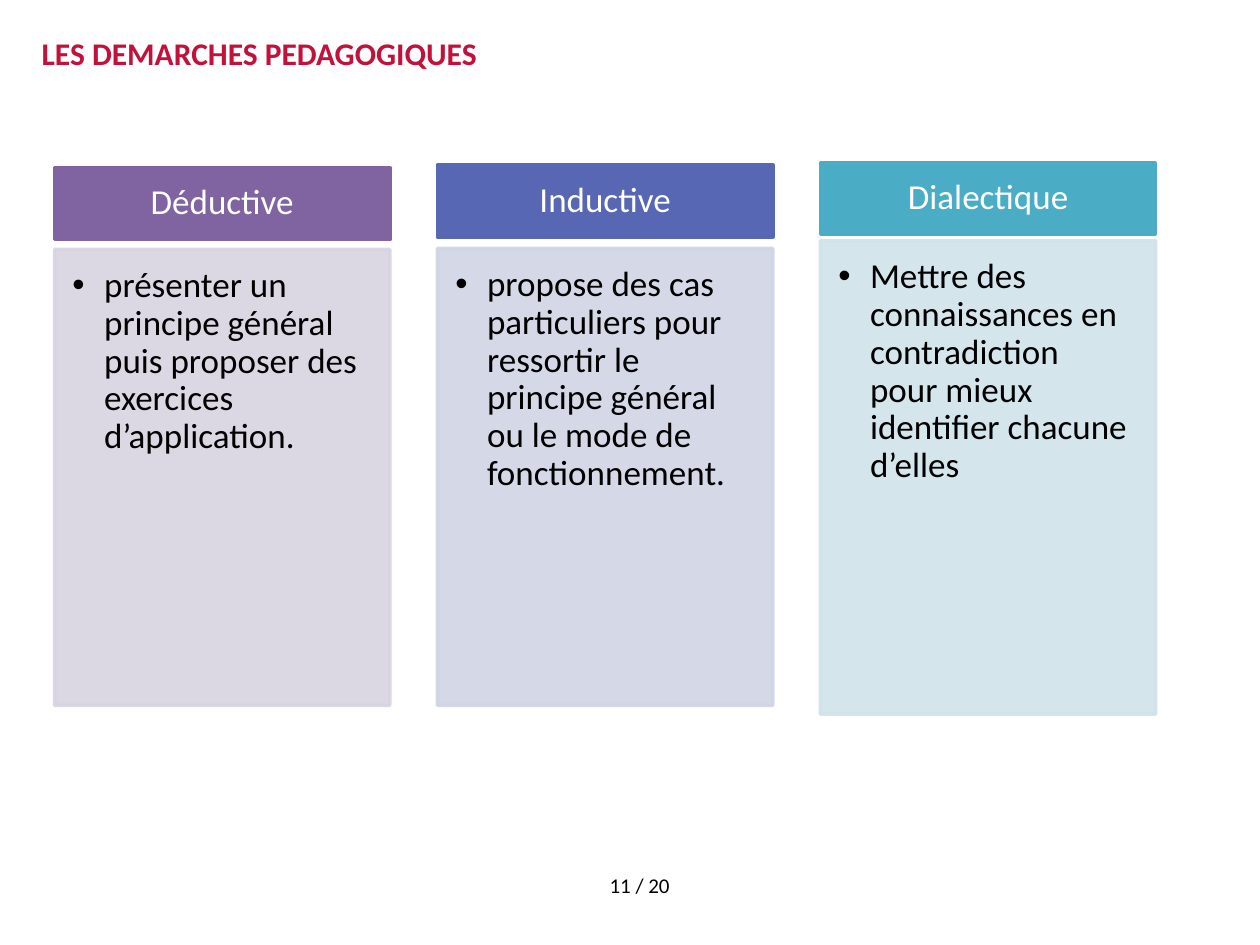
"""Build the slide on the three teaching approaches."""
from lxml import etree
from pptx import Presentation
from pptx.dml.color import RGBColor
from pptx.enum.shapes import MSO_SHAPE
from pptx.enum.text import MSO_ANCHOR, PP_ALIGN
from pptx.oxml.ns import qn
from pptx.util import Cm, Pt

RECT = MSO_SHAPE.RECTANGLE
TOP, MIDDLE = MSO_ANCHOR.TOP, MSO_ANCHOR.MIDDLE
LEFT, CENTER, JUSTIFY = PP_ALIGN.LEFT, PP_ALIGN.CENTER, PP_ALIGN.JUSTIFY

TITLE = "LES DEMARCHES PEDAGOGIQUES"
PAGE = "11 / 20"
CARDS = [
    {"head": "Déductive", "dark": "8064A2", "light": "D8D3E0", "top": 5.03, "end": 14.22,
     "text": "présenter un principe général puis proposer des exercices d’application."},
    {"head": "Inductive", "dark": "5767B4", "light": "D1D4E5", "top": 5.01, "end": 14.22,
     "text": "propose des cas particuliers pour ressortir le principe général "
             "ou le mode de fonctionnement."},
    {"head": "Dialectique", "dark": "4BACC6", "light": "D0E3EA", "top": 4.85, "end": 14.4,
     "text": "Mettre des connaissances en contradiction pour mieux identifier chacune d’elles"},
]
START, PITCH, WIDTH = 1.1, 7.72, 6.76
HEAD_TOP, HEAD_STEP, HEAD_HIGH = 3.38, -0.05, 1.45
HEAD_PAD = (0.48, 0.28, 0.48, 0.28)
BODY_PAD = (0.36, 0.36, 0.48, 0.53)


def color(fmt, code):
    """Give a fill or font a hex colour."""
    if hasattr(fmt, "solid"):
        fmt.solid()
        fmt.fore_color.rgb = RGBColor.from_string(code)
    else:
        fmt.color.rgb = RGBColor.from_string(code)


def apply(item, values):
    """Set attributes from a dict."""
    for name, value in values.items():
        setattr(item, name, value)


def write(shape, text, size, code, pad, anchor, align, spacing=None, bold=False, bullet=False):
    """Put one formatted paragraph in a shape."""
    frame = shape.text_frame
    names = ("margin_left", "margin_top", "margin_right", "margin_bottom")
    apply(frame, dict(zip(names, map(Cm, pad))))
    apply(frame, {"word_wrap": True, "vertical_anchor": anchor})
    para = frame.paragraphs[0]
    if bullet:
        props = para._p.get_or_add_pPr()
        apply_indent = {"marL": Cm(0.64), "indent": Cm(-0.64)}
        for name, value in apply_indent.items():
            props.set(name, str(int(value)))
        etree.SubElement(props, qn("a:buFont")).set("typeface", "Arial")
        etree.SubElement(props, qn("a:buChar")).set("char", "•")
    apply(para, {"alignment": align, "line_spacing": spacing, "space_before": Pt(0)})
    run = para.add_run()
    run.text = text
    apply(run.font, {"name": "Calibri", "size": Pt(size), "bold": bold})
    color(run.font, code)


def panel(slide, box, code, alpha=None):
    """Add a filled rectangle with a matching edge."""
    shape = slide.shapes.add_shape(RECT, *map(Cm, box))
    shape.shadow.inherit = False
    shape.line.width = Pt(2)
    for fill in (shape.fill, shape.line.fill):
        color(fill, code)
    if alpha:
        for tone in shape._element.spPr.iter(qn("a:srgbClr")):
            etree.SubElement(tone, qn("a:alpha")).set("val", str(alpha * 1000))
    return shape


def main():
    """Compose and save the slide."""
    deck = Presentation()
    apply(deck, {"slide_width": Cm(25.4), "slide_height": Cm(19.05)})
    slide = deck.slides.add_slide(deck.slide_layouts[5])

    title = slide.shapes.title
    apply(title, dict(zip(("left", "top", "width", "height"),
                          map(Cm, (0.84, 0.74, 23.7, 1.93)))))
    color(title.fill, "FFFFFF")
    write(title, TITLE, 18, "C2113A", (0, 0, 0, 0), TOP, JUSTIFY, Pt(20), bold=True)

    for i, card in enumerate(CARDS):
        left = START + i * PITCH
        head = panel(slide, (left, HEAD_TOP + i * HEAD_STEP, WIDTH, HEAD_HIGH), card["dark"])
        write(head, card["head"], 20, "FFFFFF", HEAD_PAD, MIDDLE, CENTER, 0.9)
        high = card["end"] - card["top"]
        body = panel(slide, (left, card["top"], WIDTH, high), card["light"], 90)
        write(body, card["text"], 20, "000000", BODY_PAD, TOP, LEFT, 0.9, bullet=True)

    page = slide.shapes.add_textbox(*map(Cm, (11.13, 17.45, 3.53, 0.79)))
    write(page, PAGE, 12, "000000", (0.25, 0.13, 0.25, 0.13), TOP, CENTER)
    deck.save("out.pptx")


if __name__ == "__main__":
    main()
